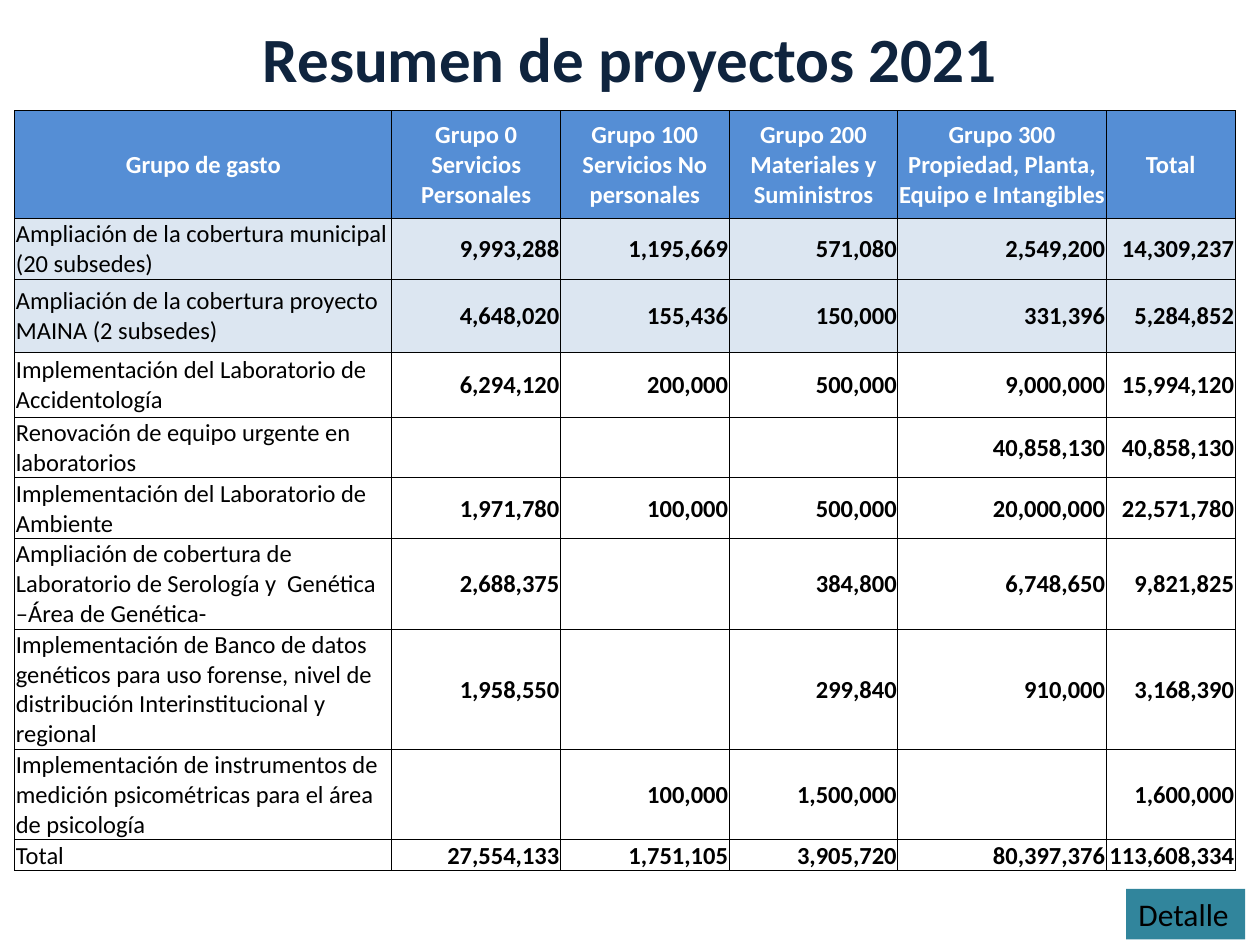
from pptx import Presentation
from pptx.dml.color import RGBColor as Rgb
from pptx.enum.shapes import MSO_SHAPE as Kind
from pptx.enum.text import MSO_ANCHOR as Anchor, MSO_AUTO_SIZE as Fit, PP_ALIGN as Align
from pptx.oxml import parse_xml
from pptx.oxml.ns import nsdecls
from pptx.util import Cm, Pt

HEADS = [
    "Grupo de gasto",
    "Grupo 0 Servicios Personales",
    "Grupo 100 Servicios No personales",
    "Grupo 200 Materiales y Suministros",
    "Grupo 300\nPropiedad, Planta,\nEquipo e Intangibles",
    "Total",
]
ROWS = [
    ["Ampliación de la cobertura municipal (20 subsedes)",
     "9,993,288", "1,195,669", "571,080", "2,549,200", "14,309,237"],
    ["Ampliación de la cobertura proyecto MAINA (2 subsedes)",
     "4,648,020", "155,436", "150,000", "331,396", "5,284,852"],
    ["Implementación del Laboratorio de Accidentología",
     "6,294,120", "200,000", "500,000", "9,000,000", "15,994,120"],
    ["Renovación de equipo urgente en laboratorios",
     "", "", "", "40,858,130", "40,858,130"],
    ["Implementación del Laboratorio de Ambiente",
     "1,971,780", "100,000", "500,000", "20,000,000", "22,571,780"],
    ["Ampliación de cobertura de Laboratorio de Serología y  Genética –Área de Genética-",
     "2,688,375", "", "384,800", "6,748,650", "9,821,825"],
    ["Implementación de Banco de datos genéticos para uso forense, nivel de "
     "distribución Interinstitucional y regional",
     "1,958,550", "", "299,840", "910,000", "3,168,390"],
    ["Implementación de instrumentos de medición psicométricas para el área de psicología",
     "", "100,000", "1,500,000", "", "1,600,000"],
    ["Total",
     "27,554,133", "1,751,105", "3,905,720", "80,397,376", "113,608,334"],
]
WIDTHS = [7.6, 3.4, 3.4, 3.4, 4.2, 2.6]
HEIGHTS = [2.17, 1.23, 1.47, 1.31, 1.22, 1.22, 1.82, 2.42, 1.82, 0.62]


def tint(code):
    return Rgb.from_string(code)


class Deck:
    font = "Calibri"
    ink = "000000"
    head = "558ED5"
    pale = "DCE6F1"

    def __init__(self):
        self.prs = Presentation()
        self.prs.slide_width, self.prs.slide_height = Cm(25.4), Cm(19.05)
        self.slide = self.prs.slides.add_slide(self.prs.slide_layouts[5])

    def label(self, para, text, size, color, bold=False, align=Align.LEFT):
        para.alignment = align
        para.font.size = Pt(size)
        for num, line in enumerate(text.split("\n")):
            if num:
                para.add_line_break()
            if line:
                run = para.add_run()
                run.text = line
                run.font.name = self.font
                run.font.size = Pt(size)
                run.font.bold = bold
                run.font.color.rgb = tint(color)

    def title(self, text, x, y, w, h):
        box = self.slide.shapes.title
        box.left, box.top, box.width, box.height = Cm(x), Cm(y), Cm(w), Cm(h)
        frame = box.text_frame
        frame.vertical_anchor = Anchor.MIDDLE
        self.label(frame.paragraphs[0], text, 36, "0F243E", True, Align.CENTER)

    def edge(self, cell):
        props = cell._tc.get_or_add_tcPr()
        for side in "LRTB":
            props.append(parse_xml(
                f'<a:ln{side} {nsdecls("a")} w="{Pt(0.5)}"><a:solidFill>'
                f'<a:srgbClr val="{self.ink}"/></a:solidFill></a:ln{side}>'))

    def cell(self, cell, text, color, bold, align, fill):
        self.edge(cell)
        cell.margin_left = cell.margin_right = cell.margin_top = Cm(0.02)
        cell.margin_bottom = 0
        cell.vertical_anchor = Anchor.MIDDLE
        if fill:
            cell.fill.solid()
            cell.fill.fore_color.rgb = tint(fill)
        else:
            cell.fill.background()
        self.label(cell.text_frame.paragraphs[0], text, 14, color, bold, align)

    def table(self, x, y):
        grid = self.slide.shapes.add_table(
            len(HEIGHTS), len(WIDTHS), Cm(x), Cm(y),
            Cm(sum(WIDTHS)), Cm(sum(HEIGHTS))).table
        for col, wide in zip(grid.columns, WIDTHS):
            col.width = Cm(wide)
        for row, high in zip(grid.rows, HEIGHTS):
            row.height = Cm(high)
        for c, text in enumerate(HEADS):
            self.cell(grid.cell(0, c), text, "FFFFFF", True, Align.CENTER, self.head)
        for r, row in enumerate(ROWS, 1):
            fill = self.pale if r <= 2 else None
            for c, text in enumerate(row):
                align = Align.RIGHT if c else Align.LEFT
                self.cell(grid.cell(r, c), text, self.ink, c > 0, align, fill)

    def button(self, text, x, y, w, h):
        box = self.slide.shapes.add_shape(Kind.RECTANGLE, Cm(x), Cm(y), Cm(w), Cm(h))
        box.shadow.inherit = False
        box.fill.solid()
        box.fill.fore_color.rgb = tint("31859C")
        box.line.fill.background()
        frame = box.text_frame
        frame.word_wrap = True
        frame.auto_size = Fit.SHAPE_TO_FIT_TEXT
        frame.vertical_anchor = Anchor.TOP
        self.label(frame.paragraphs[0], text, 18, self.ink)


def main():
    deck = Deck()
    deck.title("Resumen de proyectos 2021", 0.3, 0, 24.8, 2.3)
    deck.table(0.3, 2.23)
    deck.button("Detalle", 22.7, 17.92, 2.4, 1.02)
    deck.prs.save("out.pptx")


if __name__ == "__main__":
    main()
